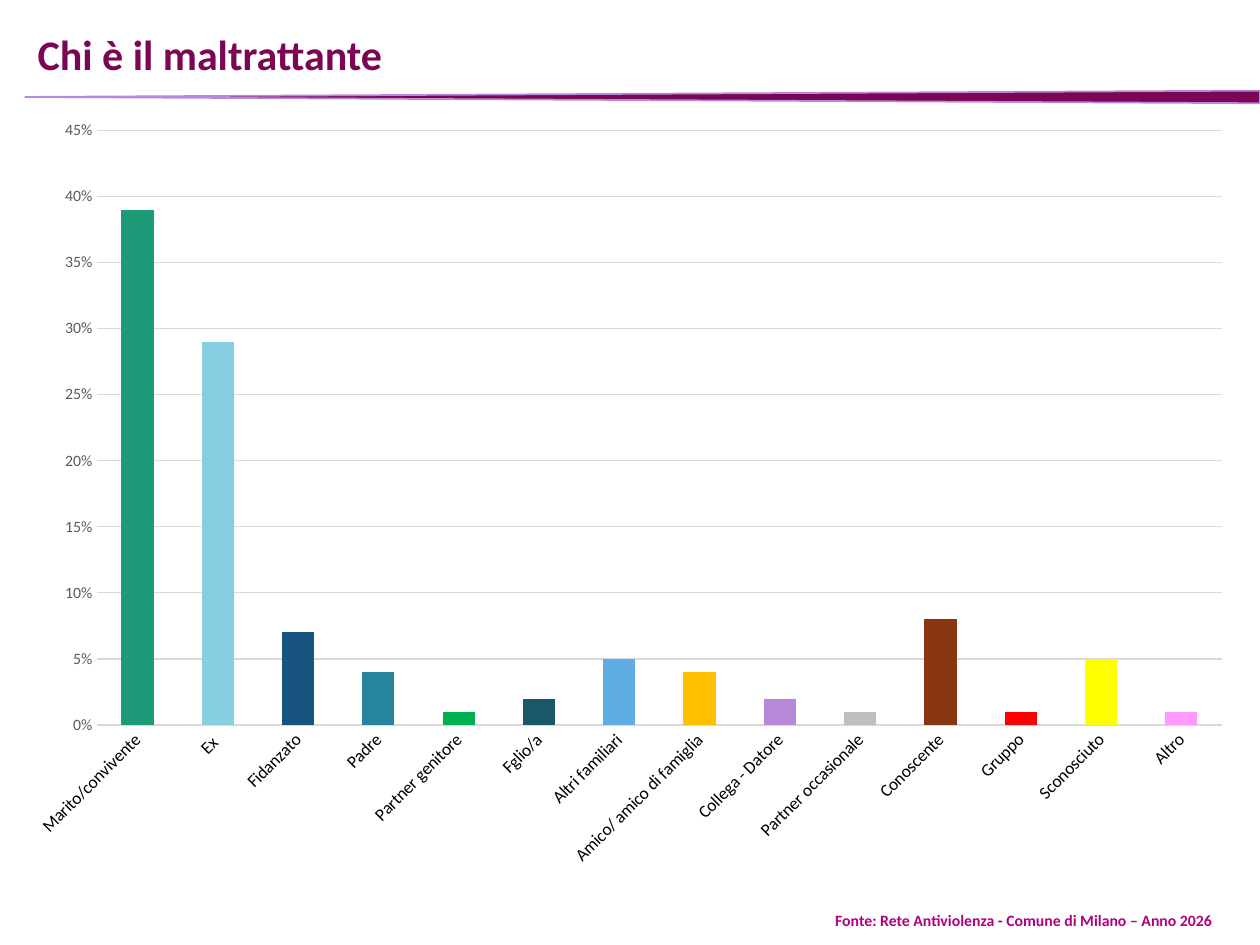
import pptx
import pptx.chart.data
import pptx.dml.color
import pptx.enum.chart
import pptx.enum.shapes
import pptx.enum.text
import pptx.util

Pt = pptx.util.Pt
theme = {
    "font": "Calibri",
    "title": ("7B0754", 24),
    "source": ("B00082", 9),
    "names": ("000000", 10),
    "scale": ("595959", 9),
    "wedge": "7B0754",
    "edge": "B889DB",
    "grid": "D9D9D9",
}

bars = [
    ("Marito/convivente", 0.39, "1D9A78"),
    ("Ex ", 0.29, "86CFE2"),
    ("Fidanzato", 0.07, "16537F"),
    ("Padre", 0.04, "26859D"),
    ("Partner genitore", 0.01, "00B050"),
    ("Fglio/a", 0.02, "195869"),
    ("Altri familiari", 0.05, "5FADE4"),
    ("Amico/ amico di famiglia", 0.04, "FFC000"),
    ("Collega - Datore", 0.02, "B889DB"),
    ("Partner occasionale", 0.01, "BFBFBF"),
    ("Conoscente", 0.08, "893713"),
    ("Gruppo", 0.01, "FF0000"),
    ("Sconosciuto", 0.05, "FFFF00"),
    ("Altro", 0.01, "FF99FF"),
]


def rgb(code):
    return pptx.dml.color.RGBColor.from_string(code)


def style(font, role, bold=False):
    """Give a font the colour and size of a role in the theme."""
    code, size = theme[role]
    font.name = theme["font"]
    font.size = Pt(size)
    font.bold = bold
    font.color.rgb = rgb(code)


deck = pptx.Presentation()
deck.slide_width, deck.slide_height = Pt(720), Pt(540)
slide = deck.slides.add_slide(deck.slide_layouts[6])

# Title and source
texts = [
    ("Chi è il maltrattante", "title", (14.4, 9.4, 620.6, 42.5)),
    ("Fonte: Rete Antiviolenza - Comune di Milano – Anno 2026", "source",
     (470.2, 517, 249.8, 18)),
]
for words, role, place in texts:
    frame = slide.shapes.add_textbox(*map(Pt, place)).text_frame
    frame.word_wrap = True
    frame.vertical_anchor = pptx.enum.text.MSO_ANCHOR.MIDDLE
    line = frame.paragraphs[0]
    line.text = words
    style(line.font, role, bold=True)

# Tapering rule under the title
wedge = slide.shapes.add_shape(
    pptx.enum.shapes.MSO_SHAPE.FLOWCHART_EXTRACT,
    Pt(363.6), Pt(-297.4), Pt(7.2), Pt(705.6))
wedge.rotation = 270
wedge.shadow.inherit = False
wedge.fill.solid()
wedge.fill.fore_color.rgb = rgb(theme["wedge"])
wedge.line.color.rgb = rgb(theme["edge"])
wedge.line.width = Pt(1)

# Column chart
names, shares, hues = zip(*bars)
data = pptx.chart.data.CategoryChartData(number_format="0%")
data.categories = names
data.add_series("Series 1", shares)
chart = slide.shapes.add_chart(
    pptx.enum.chart.XL_CHART_TYPE.COLUMN_CLUSTERED,
    Pt(7.9), Pt(60.5), Pt(704.2), Pt(442.8), data).chart
chart.has_legend = False
chart.has_title = False
style(chart.font, "names")

plot = chart.plots[0]
plot.gap_width = 150
plot.vary_by_categories = False
for spot, hue in enumerate(hues):
    fill = plot.series[0].points[spot].format.fill
    fill.solid()
    fill.fore_color.rgb = rgb(hue)

for axis, role in ((chart.category_axis, "names"), (chart.value_axis, "scale")):
    axis.major_tick_mark = pptx.enum.chart.XL_TICK_MARK.NONE
    axis.minor_tick_mark = pptx.enum.chart.XL_TICK_MARK.NONE
    axis.format.line.fill.background()
    style(axis.tick_labels.font, role)

# Category names slant upwards by 45 degrees
body = chart.category_axis._element.find(".//" + pptx.oxml.ns.qn("a:bodyPr"))
body.set("rot", "-2700000")
body.set("vert", "horz")

scale = chart.value_axis
scale.minimum_scale, scale.maximum_scale, scale.major_unit = 0, 0.45, 0.05
scale.tick_labels.number_format = "0%"
scale.tick_labels.number_format_is_linked = False
scale.has_major_gridlines = True
grid = scale.major_gridlines.format.line
grid.color.rgb = rgb(theme["grid"])
grid.width = Pt(0.75)

deck.save("out.pptx")
